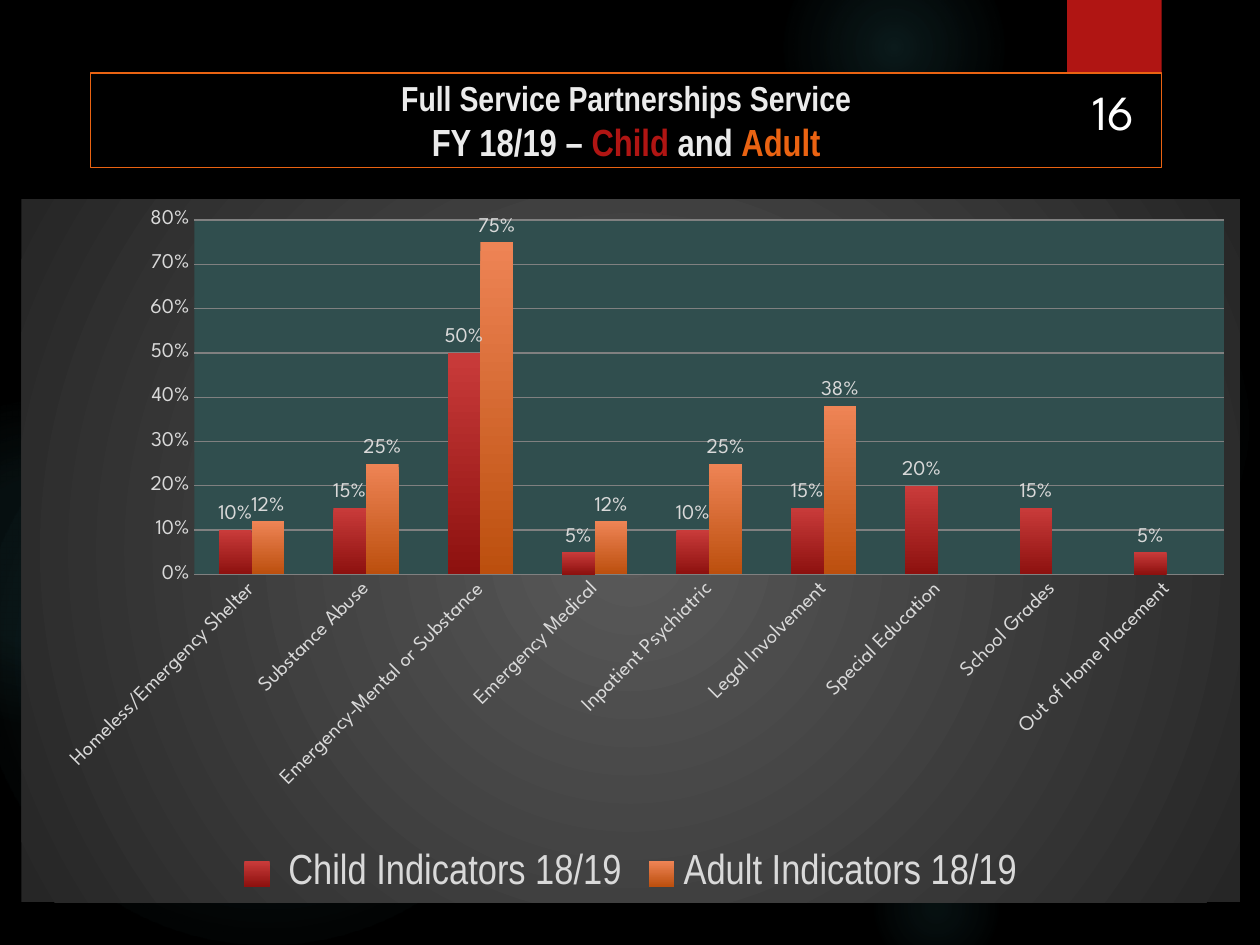
from lxml.etree import SubElement
from pptx import Presentation
from pptx.chart.data import CategoryChartData
from pptx.dml.color import RGBColor
from pptx.enum.chart import XL_CHART_TYPE as CHART, XL_LABEL_POSITION as LABEL
from pptx.enum.chart import XL_LEGEND_POSITION as LEGEND, XL_TICK_MARK as TICK
from pptx.enum.shapes import MSO_SHAPE as SHAPE
from pptx.enum.text import MSO_ANCHOR as ANCHOR, PP_ALIGN as ALIGN
from pptx.oxml import parse_xml
from pptx.oxml.ns import nsdecls, qn
from pptx.util import Inches, Pt

NARROW, SPARTAN = "Arial Narrow", "League Spartan"
BLACK, WHITE, PALE, LIGHT = "000000", "FFFFFF", "EBEBEB", "D9D9D9"
RED, ORANGE, GLOW = "B01513", "EA6312", "50B9C1"

GLOWS = [
    (6.89, 1.83, 3.08, [(0, 7), (36, 6), (69, 0)]),
    (6.22, -0.5, 1.75, [(0, 14), (36, 7), (73, 0)]),
    (6.89, 6.67, 1.08, [(0, 9), (36, 5), (66, 0)]),
    (-0.17, 2.92, 4.58, [(0, 11), (36, 10), (75, 0)]),
    (-0.92, 3.17, 2.58, [(0, 8), (36, 8), (72, 0)]),
]
TITLE = [
    [("Full Service Partnerships Service", 19.8, PALE)],
    [("FY 18/19 – ", 21.6, PALE), ("Child", 21.6, RED),
     (" and ", 21.6, PALE), ("Adult", 21.6, ORANGE)],
]
CATEGORIES = [
    "Homeless/Emergency Shelter", "Substance Abuse",
    "Emergency-Mental or Substance", "Emergency Medical",
    "Inpatient Psychiatric", "Legal Involvement", "Special Education",
    "School Grades", "Out of Home Placement",
]
SERIES = [
    (" Child Indicators 18/19", ("C93B3A", "8D110F"),
     [0.10, 0.15, 0.50, 0.05, 0.10, 0.15, 0.20, 0.15, 0.05]),
    ("Adult Indicators 18/19", ("EE8455", "BC4F0E"),
     [0.12, 0.25, 0.75, 0.12, 0.25, 0.38, None, None, None]),
]
PLOT = {"x": 0.142, "y": 0.03, "w": 0.845, "h": 0.504}


def rgb(value):
    """Turn a hex string into a colour."""
    return RGBColor.from_string(value)


def style(font, name, size, color, bold=None):
    """Set the face, size and colour of a font."""
    font.name, font.size, font.bold = name, Pt(size), bold
    font.color.rgb = rgb(color)


def gradient(stops, radial=True):
    """Build a gradient fill from (position, colour, opacity) stops."""
    marks = "".join(
        f'<a:gs pos="{pos * 1000}"><a:srgbClr val="{color}">'
        f'<a:alpha val="{alpha * 1000}"/></a:srgbClr></a:gs>'
        for pos, color, alpha in stops)
    course = ('<a:path path="circle"><a:fillToRect l="50000" t="50000" '
              'r="50000" b="50000"/></a:path>' if radial
              else '<a:lin ang="5400000" scaled="0"/>')
    return parse_xml(f'<a:gradFill {nsdecls("a")} rotWithShape="1">'
                     f'<a:gsLst>{marks}</a:gsLst>{course}</a:gradFill>')


def add_glows(slide):
    """Add the soft background circles."""
    for x, y, size, stops in GLOWS:
        sp = slide.shapes.add_shape(SHAPE.OVAL, *map(Inches, (x, y, size, size)))
        sp.shadow.inherit = False
        sp.line.fill.background()
        fill = gradient([(pos, GLOW, alpha) for pos, alpha in stops])
        sp._element.spPr.find(qn("a:prstGeom")).addnext(fill)


def add_tab(slide):
    """Add the red tab with its soft shadow."""
    sp = slide.shapes.add_shape(SHAPE.RECTANGLE, Inches(8.47), 0,
                                Inches(0.75), Inches(1.2))
    sp.fill.solid()
    sp.fill.fore_color.rgb = rgb(RED)
    sp.line.fill.background()
    sp.shadow.inherit = False
    sp._element.spPr.find(qn("a:effectLst")).append(parse_xml(
        f'<a:outerShdw {nsdecls("a")} blurRad="38100" dist="25400" dir="5400000">'
        f'<a:srgbClr val="{BLACK}"><a:alpha val="45000"/></a:srgbClr></a:outerShdw>'))


def add_title(slide):
    """Place and format the two-line title above the tab."""
    sp = slide.shapes.title
    slide.shapes._spTree.append(sp._element)
    sp.left, sp.top, sp.width, sp.height = map(Inches, (0.72, 0.58, 8.5, 0.75))
    sp.fill.solid()
    sp.fill.fore_color.rgb = rgb(BLACK)
    sp.line.color.rgb = rgb(ORANGE)
    sp.line.width = Pt(0.75)
    tf = sp.text_frame
    tf.word_wrap, tf.vertical_anchor = True, ANCHOR.MIDDLE
    p = tf.paragraphs[0]
    p.alignment = ALIGN.CENTER
    for number, line in enumerate(TITLE):
        if number:
            p.add_line_break()
        for text, size, color in line:
            r = p.add_run()
            r.text = text
            style(r.font, NARROW, size, color, True)


def add_indicator_chart(slide):
    """Add the clustered columns of child and adult indicators."""
    data = CategoryChartData(number_format="0%")
    data.categories = CATEGORIES
    for name, _, values in SERIES:
        data.add_series(name, values)
    frame = slide.shapes.add_chart(
        CHART.COLUMN_CLUSTERED, *map(Inches, (0.17, 1.58, 9.67, 5.58)), data)
    chart = frame.chart
    style(chart.font, SPARTAN, 10, WHITE)
    chart.has_title = False
    chart.has_legend = True
    chart.legend.position = LEGEND.BOTTOM
    chart.legend.include_in_layout = False
    style(chart.legend.font, NARROW, 24, LIGHT)

    for axis in (chart.category_axis, chart.value_axis):
        axis.major_tick_mark = axis.minor_tick_mark = TICK.NONE
        axis.format.line.fill.background()
        style(axis.tick_labels.font, SPARTAN, 12, LIGHT)
    chart.category_axis._element.find(
        qn("c:txPr")).find(qn("a:bodyPr")).set("rot", "-2700000")
    values = chart.value_axis
    values.minimum_scale, values.maximum_scale, values.major_unit = 0, 0.8, 0.1
    values.tick_labels.number_format = "0%"
    values.tick_labels.number_format_is_linked = False
    values.major_gridlines.format.line.color.rgb = rgb("808080")
    values.major_gridlines.format.line.width = Pt(0.75)

    plot = chart.plots[0]
    plot.gap_width, plot.overlap, plot.vary_by_categories = 150, 0, False
    for series, (_, (top, bottom), _) in zip(plot.series, SERIES):
        series.invert_if_negative = False
        series._element.get_or_add_spPr().append(
            gradient([(0, top, 100), (100, bottom, 100)], radial=False))
        labels = series.data_labels
        labels.show_value, labels.position = True, LABEL.OUTSIDE_END
        labels.number_format, labels.number_format_is_linked = "0%", False
        style(labels.font, SPARTAN, 12, LIGHT)
    fill_chart(chart)


def fill_chart(chart):
    """Fill the chart and plot areas and fix the plot position."""
    root = chart._chartSpace.find(qn("c:chart"))
    area = root.find(qn("c:plotArea"))
    for old in area.findall(qn("c:layout")):
        area.remove(old)
    sizes = "".join(f'<c:{key} val="{value}"/>' for key, value in PLOT.items())
    area.insert(0, parse_xml(
        f'<c:layout {nsdecls("c")}><c:manualLayout><c:layoutTarget val="inner"/>'
        f'<c:xMode val="edge"/><c:yMode val="edge"/>{sizes}'
        '</c:manualLayout></c:layout>'))
    area.append(parse_xml(
        f'<c:spPr {nsdecls("c", "a")}><a:solidFill><a:srgbClr val="304E4E"/>'
        '</a:solidFill></c:spPr>'))
    back = parse_xml(f'<c:spPr {nsdecls("c", "a")}/>')
    back.append(gradient([(0, "595959", 100), (100, "262626", 100)]))
    SubElement(SubElement(back, qn("a:ln")), qn("a:noFill"))
    root.addnext(back)


def add_page_number(slide):
    """Add the page number over the title box."""
    sp = slide.shapes.add_textbox(*map(Inches, (8.49, 0.32, 0.69, 0.84)))
    tf = sp.text_frame
    tf.word_wrap, tf.vertical_anchor = True, ANCHOR.BOTTOM
    p = tf.paragraphs[0]
    p.alignment = ALIGN.CENTER
    r = p.add_run()
    r.text = "16"
    style(r.font, SPARTAN, 28, WHITE)


def main():
    """Build the slide and save it."""
    prs = Presentation()
    prs.slide_width, prs.slide_height = Inches(10), Inches(7.5)
    slide = prs.slides.add_slide(prs.slide_layouts[5])
    slide.background.fill.solid()
    slide.background.fill.fore_color.rgb = rgb(BLACK)
    for add in (add_glows, add_tab, add_title, add_indicator_chart, add_page_number):
        add(slide)
    prs.save("out.pptx")


if __name__ == "__main__":
    main()
